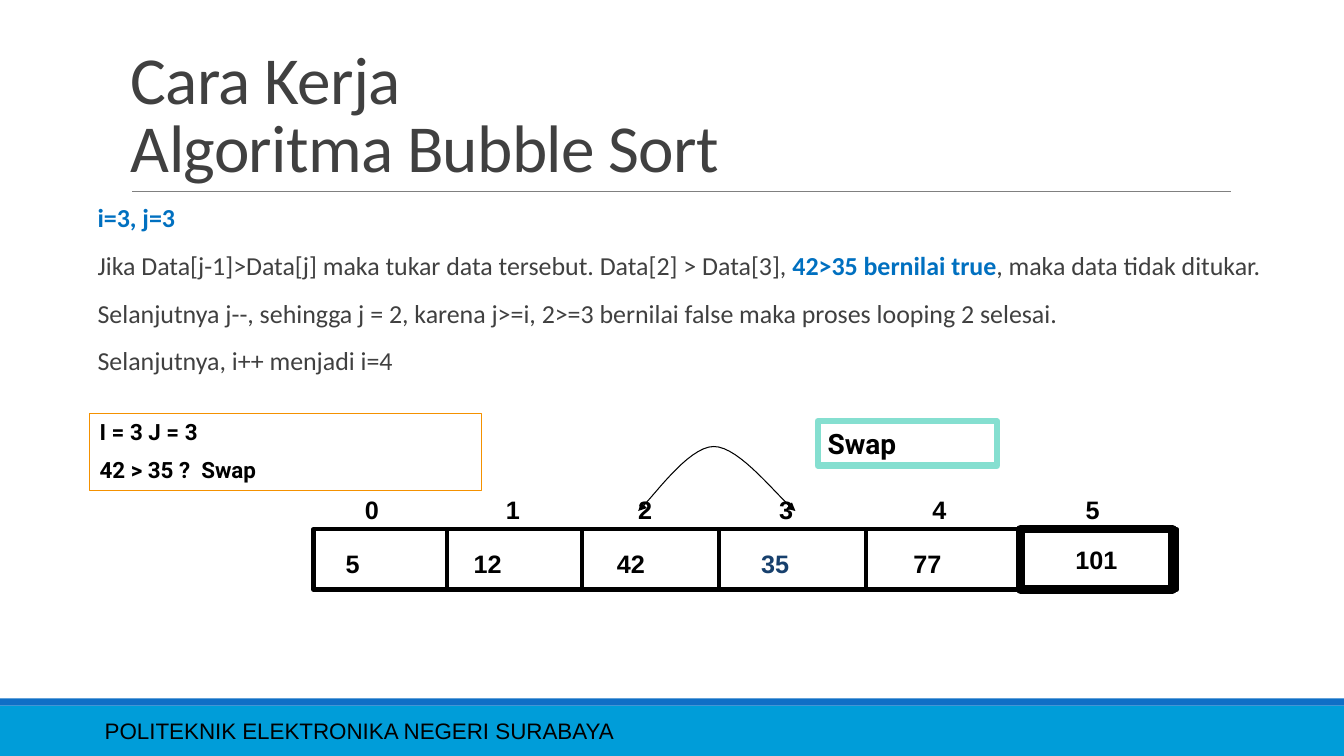
from lxml.etree import SubElement as Sub
from pptx import Presentation
from pptx.dml.color import RGBColor as RGB
from pptx.enum.shapes import MSO_CONNECTOR as Conn, MSO_SHAPE as Shape
from pptx.enum.text import MSO_ANCHOR as Anchor, PP_ALIGN as Align
from pptx.oxml.ns import qn
from pptx.util import Inches, Pt

HEX = {
    "black": "000000", "white": "FFFFFF", "gray": "808080", "dark": "404040",
    "blue": "0070C0", "navy": "17406D", "bar": "009DD9", "strip": "0F6FC6",
    "orange": "F49100", "mint": "85DFD0",
}
BOLD = {"name": "Arial", "size": Pt(18), "bold": True, "color": "black"}
NOTE = {"name": "Roboto", "size": Pt(16), "bold": True, "color": "black"}
BODY = {"name": "Calibri", "size": Pt(18.5), "bold": False, "color": "dark"}
KEY = BODY | {"bold": True, "color": "blue"}
HEAD = {"name": "Calibri", "size": Pt(48), "color": "dark"}
FOOT = {"name": "Arial", "size": Pt(16), "color": "black"}


def rgb(name):
    return RGB.from_string(HEX[name])


def write(shape, paras, frame=None, **form):
    """Fill a shape with paragraphs, each a list of (text, font format) runs."""
    text = shape.text_frame
    text.word_wrap = True
    for key, val in (frame or {}).items():
        setattr(text, key, val)
    for num, runs in enumerate(paras):
        para = text.add_paragraph() if num else text.paragraphs[0]
        for key, val in form.items():
            if num or key != "space_before":
                setattr(para, key, val)
        for words, fmt in runs:
            run = para.add_run()
            run.text = words
            for key, val in fmt.items():
                if key == "color":
                    run.font.color.rgb = rgb(val)
                else:
                    setattr(run.font, key, val)
    return shape


def label(slide, box, paras, frame=None, **form):
    area = slide.shapes.add_textbox(*map(Inches, box))
    return write(area, paras, frame, **form)


def stroke(item, color, width):
    item.line.color.rgb = rgb(color)
    item.line.width = Pt(width)


def rect(slide, box, fill=None, line=None, width=1):
    shape = slide.shapes.add_shape(Shape.RECTANGLE, *map(Inches, box))
    shape.shadow.inherit = False
    if fill:
        shape.fill.solid()
        shape.fill.fore_color.rgb = rgb(fill)
    else:
        shape.fill.background()
    if line:
        stroke(shape, line, width)
    else:
        shape.line.fill.background()
    return shape


def rule(slide, start, end, color, width):
    line = slide.shapes.add_connector(
        Conn.STRAIGHT, *map(Inches, (*start, *end)))
    stroke(line, color, width)
    Sub(line._element.spPr, qn("a:effectLst"))


def footer(slide, box):
    left, top, wide, high = box
    rect(slide, (left, top + 0.07, wide, high - 0.07), "bar")
    rect(slide, (left, top, wide, 0.07), "strip")
    label(slide, (left + 0.94, top + 0.12, 8.41, 0.4),
          [[("POLITEKNIK ELEKTRONIKA NEGERI SURABAYA", FOOT)]],
          {"vertical_anchor": Anchor.MIDDLE})


def title(slide, box):
    left, top, wide, high = box
    base = top + high
    rule(slide, (left + 0.11, base), (left + 11.01, base), "gray", 0.5)
    area = label(slide, box, [[("Cara Kerja", HEAD)],
                              [("Algoritma Bubble Sort", HEAD)]],
                 {"vertical_anchor": Anchor.BOTTOM}, line_spacing=0.85)
    for para in area.text_frame.paragraphs:
        for run in para.runs:
            run.font._element.set("spc", "-50")


def body(slide, box):
    label(slide, box, [
        [("i=3, j=3", KEY)],
        [("Jika Data[j-1]>Data[j] maka tukar data tersebut. "
          "Data[2] > Data[3], ", BODY),
         ("42>35 bernilai true", KEY),
         (", maka data tidak ditukar.", BODY)],
        [("Selanjutnya j--, sehingga j = 2, karena j>=i, 2>=3 bernilai false "
          "maka proses looping 2 selesai.", BODY)],
        [("Selanjutnya, i++ menjadi i=4", BODY)],
    ], {"margin_right": 0}, line_spacing=0.9,
        space_before=Pt(12), space_after=Pt(2))


def note(slide, box, lines, color, width, size):
    shape = rect(slide, box, None, color, width)
    write(shape, [[(line, NOTE | {"size": Pt(size)})] for line in lines],
          {"vertical_anchor": Anchor.TOP},
          alignment=Align.LEFT, space_before=Pt(8))


def array(slide, box):
    """Draw the data cells with their index numbers above."""
    left, top, wide, high = box
    rect(slide, box, None, "black", 3)
    for step in (1.32, 2.66, 4.02, 5.48, 6.99):
        side = left + step
        rule(slide, (side, top), (side, top + high), "black", 3)
    cells = (("5", 0.22), ("12", 1.49), ("42", 2.91),
             ("35", 4.34), ("77", 5.85))
    for value, step in cells:
        color = "navy" if value == "35" else "black"
        label(slide, (left + step, top + 0.14, 0.6, 0.41),
              [[(value, BOLD | {"color": color})]])
    last = rect(slide, (left + 7.01, top, 1.51, high), None, "black", 6)
    write(last, [[("101", BOLD)]], {"vertical_anchor": Anchor.MIDDLE},
          alignment=Align.CENTER)

    index = label(slide, (left + 0.41, top - 0.4, 7.72, 0.41), [[]])
    props = index.text_frame.paragraphs[0]._p.get_or_add_pPr()
    tabs = Sub(props, qn("a:tabLst"))
    for stop in (1.4, 2.71, 4.11, 5.63, 7.15):
        Sub(tabs, qn("a:tab"), pos=str(Inches(stop)), algn="l")
    write(index, [[("\t".join(map(str, range(6))), BOLD)]])


def arc(slide, box):
    """Draw the two-headed swap arrow as two joined Bezier curves."""
    left, top, wide, high = box
    curves = (((0, 0.64), (0.13, 0.53), (0.49, 0), (0.75, 0)),
              ((0.75, 0), (1.01, 0), (1.39, 0.51), (1.56, 0.64)))
    steps = 16
    points = []
    for curve in curves:
        for num in range(steps + 1):
            t = num / steps
            parts = ((1 - t) ** 3, 3 * t * (1 - t) ** 2,
                     3 * t * t * (1 - t), t ** 3)
            x, y = (sum(p * c for p, c in zip(parts, axis))
                    for axis in zip(*curve))
            points.append((Inches(left + x), Inches(top + y)))
    path = slide.shapes.build_freeform(*points[0])
    path.add_line_segments(points[1:], close=False)
    shape = path.convert_to_shape()
    shape.shadow.inherit = False
    shape.fill.background()
    stroke(shape, "black", 0.75)
    for end in ("a:headEnd", "a:tailEnd"):
        Sub(shape.line._get_or_add_ln(), qn(end), type="triangle")


def main():
    deck = Presentation()
    deck.slide_width, deck.slide_height = Inches(13.33), Inches(7.5)
    slide = deck.slides.add_slide(deck.slide_layouts[6])
    slide.background.fill.solid()
    slide.background.fill.fore_color.rgb = rgb("white")
    footer(slide, (0, 6.93, 13.33, 0.57))
    array(slide, (3.11, 5.25, 8.56, 0.6))
    arc(slide, (6.33, 4.43, 1.56, 0.64))
    note(slide, (0.89, 4.1, 3.89, 0.77),
         ("I = 3 J = 3", "42 > 35 ?  Swap"), "orange", 0.75, 16)
    note(slide, (8.11, 4.18, 1.78, 0.44), ("Swap",), "mint", 4.5, 20)
    title(slide, (1.2, 0.31, 11, 1.59))
    body(slide, (0.87, 1.99, 12, 2))
    deck.save("out.pptx")


if __name__ == "__main__":
    main()
